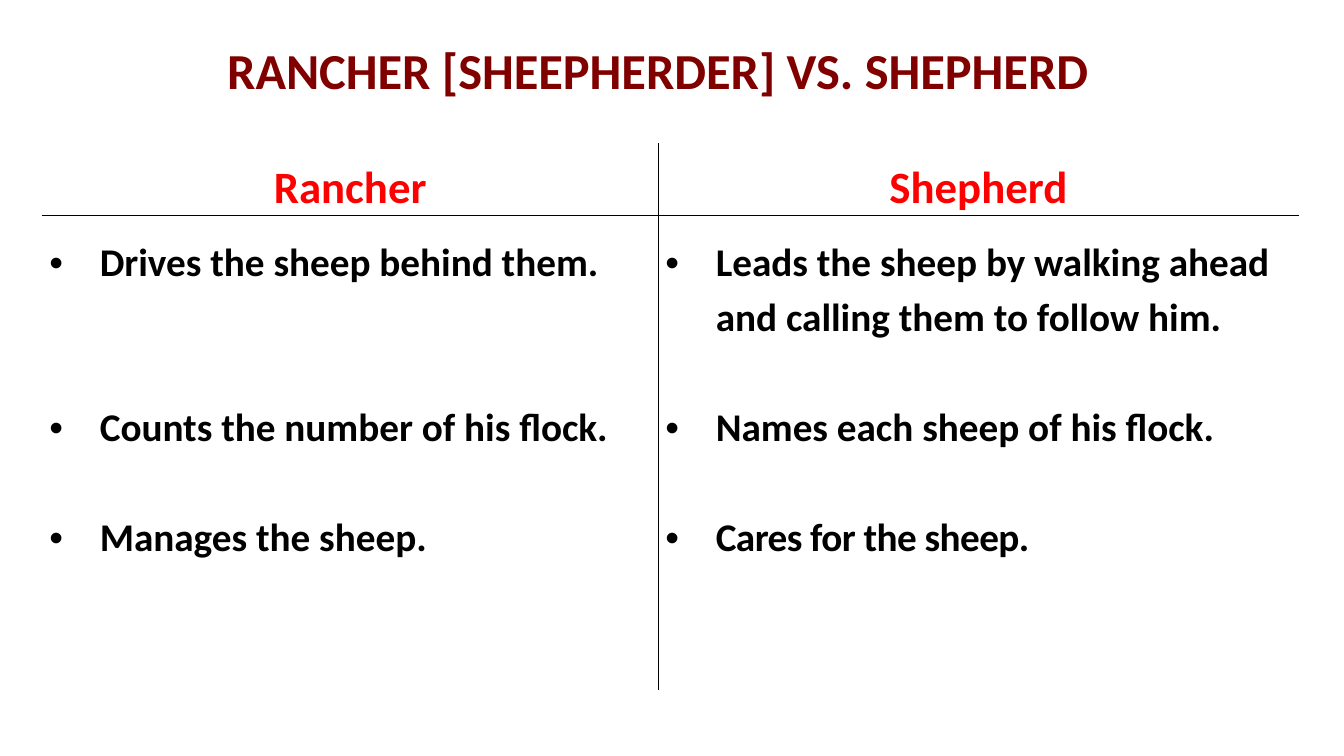
import pptx
import pptx.dml.color
import pptx.enum.text
import pptx.oxml
import pptx.oxml.ns
import pptx.util
from pptx.util import Inches

FONT = "Calibri"
LINE_SPACING = 1.15
LINE_PITCH = 39.3
RANCHER = [
    ("Drives the sheep behind them.", 0, 0),
    ("Counts the number of his flock.", 2, 0),
    ("Manages the sheep.", 1, 0),
]
SHEPHERD = [
    ("Leads the sheep by walking ahead and calling them to follow him.", 0, 0),
    ("Names each sheep of his flock.", 1, 0),
    ("Cares for the sheep.", 1, -40),
]


def color(value):
    """Turn a hex string into a colour."""
    return pptx.dml.color.RGBColor.from_string(value)


def add_run(paragraph, text, size, value):
    """Add one bold run to a paragraph."""
    run = paragraph.add_run()
    run.text = text
    run.font.name = FONT
    run.font.size = pptx.util.Pt(size)
    run.font.bold = True
    run.font.color.rgb = color(value)
    return run


def add_xml(parent, tag, content):
    """Append a drawing element given by its tag and the rest of its markup."""
    namespace = pptx.oxml.ns.nsdecls("a")
    parent.append(pptx.oxml.parse_xml(f"<a:{tag} {namespace} {content}"))


def format_cell(cell, sides):
    """Give a cell its margins, clear fill and black rules on the named sides."""
    cell.margin_left = cell.margin_right = Inches(0.07)
    cell.margin_top = cell.margin_bottom = 0
    properties = cell._tc.get_or_add_tcPr()
    for side in "LRTB":
        if side in sides:
            line = '<a:solidFill><a:srgbClr val="000000"/></a:solidFill>'
        else:
            line = "<a:noFill/>"
        add_xml(properties, f"ln{side}", f'w="12700">{line}</a:ln{side}>')
    cell.fill.background()


def fill_heading(cell, heading):
    """Write a column heading."""
    cell.vertical_anchor = pptx.enum.text.MSO_ANCHOR.BOTTOM
    paragraph = cell.text_frame.paragraphs[0]
    paragraph.alignment = pptx.enum.text.PP_ALIGN.CENTER
    paragraph.line_spacing = LINE_SPACING
    add_run(paragraph, heading, 32, "FF0000")


def fill_traits(cell, traits):
    """Write bulleted traits, each with its gap in lines and letter spacing."""
    cell.margin_top = Inches(0.16)
    frame = cell.text_frame
    for index, (trait, gap, tracking) in enumerate(traits):
        paragraph = frame.add_paragraph() if index else frame.paragraphs[0]
        paragraph.line_spacing = LINE_SPACING
        paragraph.space_before = pptx.util.Pt(gap * LINE_PITCH)
        properties = paragraph._p.get_or_add_pPr()
        properties.set("marL", str(Inches(0.5)))
        properties.set("indent", str(Inches(-0.5)))
        add_xml(properties, "buFont", 'typeface="Arial"/>')
        add_xml(properties, "buChar", 'char="•"/>')
        run = add_run(paragraph, trait, 28, "000000")
        if tracking:
            run._r.get_or_add_rPr().set("spc", str(tracking))


def add_title(slide, left, top, width, height):
    """Place and format the slide title."""
    title = slide.shapes.title
    title.left, title.top = Inches(left), Inches(top)
    title.width, title.height = Inches(width), Inches(height)
    title.text_frame.vertical_anchor = pptx.enum.text.MSO_ANCHOR.MIDDLE
    paragraph = title.text_frame.paragraphs[0]
    paragraph.alignment = pptx.enum.text.PP_ALIGN.CENTER
    add_run(paragraph, "RANCHER [SHEEPHERDER] VS. SHEPHERD ", 36, "800000")


def add_comparison(slide, left, top, width, height):
    """Place the two-column table of headings and traits."""
    rancher_width, heading_height = 6.11, 0.72
    table = slide.shapes.add_table(
        2, 2, Inches(left), Inches(top), Inches(width), Inches(height)
    ).table
    table.first_row = table.horz_banding = False
    table.columns[0].width = Inches(rancher_width)
    table.columns[1].width = Inches(width - rancher_width)
    table.rows[0].height = Inches(heading_height)
    table.rows[1].height = Inches(height - heading_height)
    columns = [("Rancher", RANCHER, "R"), ("Shepherd", SHEPHERD, "L")]
    for index, (heading, traits, inner_side) in enumerate(columns):
        heading_cell, traits_cell = table.cell(0, index), table.cell(1, index)
        format_cell(heading_cell, inner_side + "B")
        format_cell(traits_cell, inner_side + "T")
        fill_heading(heading_cell, heading)
        fill_traits(traits_cell, traits)


def main():
    """Build the slide and save it."""
    presentation = pptx.Presentation()
    presentation.slide_width = Inches(13.33)
    presentation.slide_height = Inches(7.5)
    slide = presentation.slides.add_slide(presentation.slide_layouts[5])
    add_title(slide, 0.25, 0.4, 12.67, 0.58)
    add_comparison(slide, 0.42, 1.42, 12.46, 5.43)
    presentation.save("out.pptx")


if __name__ == "__main__":
    main()
